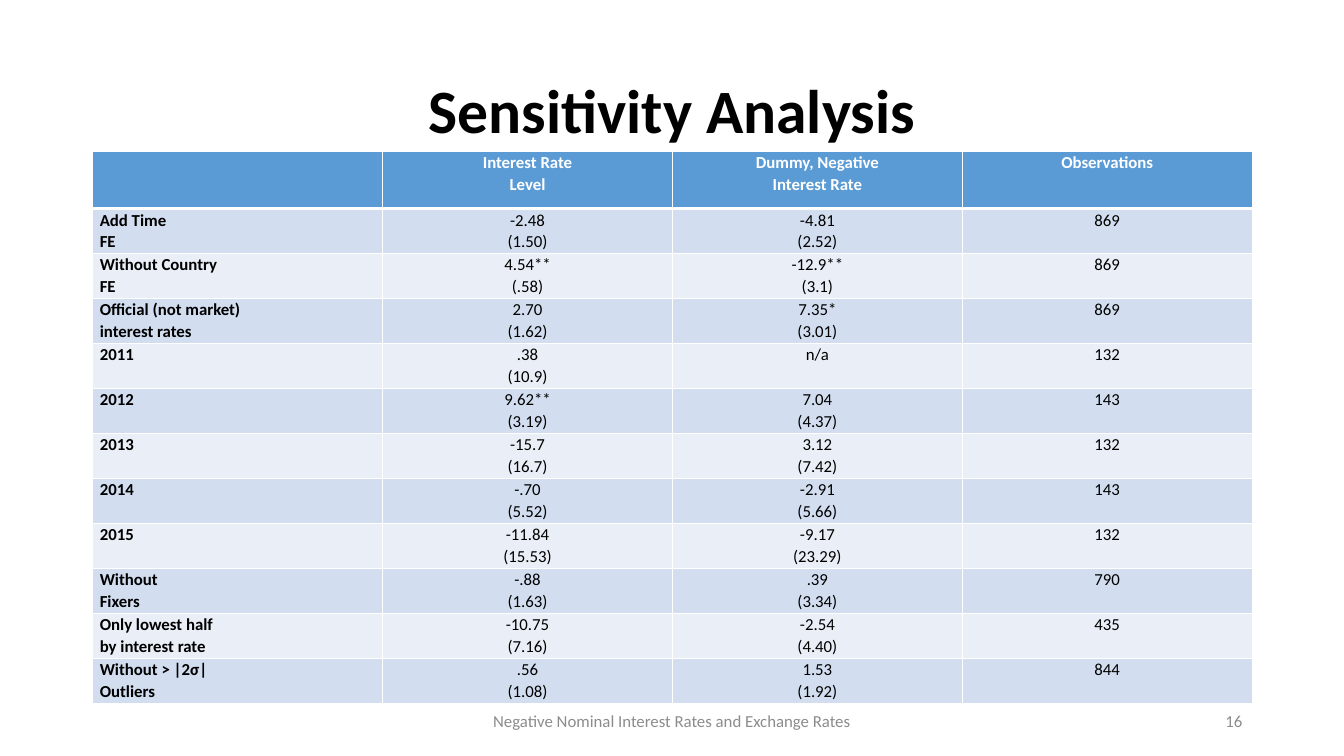
from lxml import etree
from pptx import Presentation
from pptx.dml.color import RGBColor
from pptx.enum.text import MSO_ANCHOR, PP_ALIGN
from pptx.oxml.ns import qn
from pptx.util import Inches, Pt

LEFT, CENTER, RIGHT = PP_ALIGN.LEFT, PP_ALIGN.CENTER, PP_ALIGN.RIGHT
MIDDLE = MSO_ANCHOR.MIDDLE
FONT = "Calibri"
BLACK, WHITE, GREY = "000000", "FFFFFF", "8C8C8C"
HEADER_FILL, BANDS = "5B9BD5", ("D2DEEF", "EAEFF7")

TITLE = "Sensitivity Analysis"
FOOTER = "Negative Nominal Interest Rates and Exchange Rates"
PAGE_NUMBER = "16"
ROWS = [
    ("", "Interest Rate\nLevel", "Dummy, Negative\nInterest Rate", "Observations"),
    ("Add Time\nFE", "-2.48\n(1.50)", "-4.81\n(2.52)", "869"),
    ("Without Country\nFE", "4.54**\n(.58)", "-12.9**\n(3.1)", "869"),
    ("Official (not market)\ninterest rates", "2.70\n(1.62)", "7.35*\n(3.01)", "869"),
    ("2011", ".38\n(10.9)", "n/a", "132"),
    ("2012", "9.62**\n(3.19)", "7.04\n(4.37)", "143"),
    ("2013", "-15.7\n(16.7)", "3.12\n(7.42)", "132"),
    ("2014", "-.70\n(5.52)", "-2.91\n(5.66)", "143"),
    ("2015", "-11.84\n(15.53)", "-9.17\n(23.29)", "132"),
    ("Without\nFixers", "-.88\n(1.63)", ".39\n(3.34)", "790"),
    ("Only lowest half\nby interest rate", "-10.75\n(7.16)", "-2.54\n(4.40)", "435"),
    ("Without > |2σ|\nOutliers", ".56\n(1.08)", "1.53\n(1.92)", "844"),
]

SLIDE_WIDTH, SLIDE_HEIGHT = 13.33, 7.5
MARGIN = 0.92
CONTENT_WIDTH = 11.5
TABLE_TOP, TABLE_HEIGHT, HEADER_HEIGHT = 1.5, 5.48, 0.57
FOOTER_TOP, FOOTER_HEIGHT = 6.95, 0.4


def color(value):
    return RGBColor.from_string(value)


def write(frame, text, size, ink, align, bold=False, spacing=None):
    frame.text = text
    for para in frame.paragraphs:
        para.alignment = align
        para.line_spacing = spacing
        for span in para.runs:
            span.font.name, span.font.size, span.font.bold = FONT, Pt(size), bold
            span.font.color.rgb = color(ink)


def set_borders(cell, bottom_width):
    properties = cell._tc.get_or_add_tcPr()
    for index, side in enumerate(("lnL", "lnR", "lnT", "lnB")):
        width = bottom_width if side == "lnB" else 1
        line = etree.Element(qn(f"a:{side}"), w=str(Pt(width)))
        fill = etree.SubElement(line, qn("a:solidFill"))
        etree.SubElement(fill, qn("a:srgbClr"), val=WHITE)
        properties.insert(index, line)


def add_footer(page, text, left, width, align):
    box = page.shapes.add_textbox(
        Inches(left), Inches(FOOTER_TOP), Inches(width), Inches(FOOTER_HEIGHT))
    box.text_frame.word_wrap = True
    box.text_frame.vertical_anchor = MIDDLE
    write(box.text_frame, text, 12, GREY, align)


def add_results(page):
    table = page.shapes.add_table(
        len(ROWS), len(ROWS[0]), Inches(MARGIN), Inches(TABLE_TOP),
        Inches(CONTENT_WIDTH), Inches(TABLE_HEIGHT)).table
    body_height = (TABLE_HEIGHT - HEADER_HEIGHT) / (len(ROWS) - 1)
    for r, texts in enumerate(ROWS):
        header = r == 0
        table.rows[r].height = Inches(HEADER_HEIGHT if header else body_height)
        for c, text in enumerate(texts):
            cell = table.cell(r, c)
            cell.margin_left = cell.margin_right = Inches(0.07)
            cell.margin_top = cell.margin_bottom = 0
            cell.fill.solid()
            cell.fill.fore_color.rgb = color(HEADER_FILL if header else BANDS[(r - 1) % 2])
            set_borders(cell, 3 if header else 1)
            write(cell.text_frame, text, 12, WHITE if header else BLACK,
                  CENTER if c else LEFT, header or c == 0, 1.07)


def main():
    deck = Presentation()
    deck.slide_width, deck.slide_height = Inches(SLIDE_WIDTH), Inches(SLIDE_HEIGHT)
    page = deck.slides.add_slide(deck.slide_layouts[5])

    title = page.shapes.title
    title.left, title.top = Inches(MARGIN), Inches(0.4)
    title.width, title.height = Inches(CONTENT_WIDTH), Inches(1.45)
    title.text_frame.vertical_anchor = MIDDLE
    write(title.text_frame, TITLE, 44, BLACK, CENTER, True, 0.9)

    add_results(page)
    add_footer(page, FOOTER, (SLIDE_WIDTH - 4.5) / 2, 4.5, CENTER)
    add_footer(page, PAGE_NUMBER, MARGIN + CONTENT_WIDTH - 3, 3, RIGHT)
    deck.save("out.pptx")


if __name__ == "__main__":
    main()
